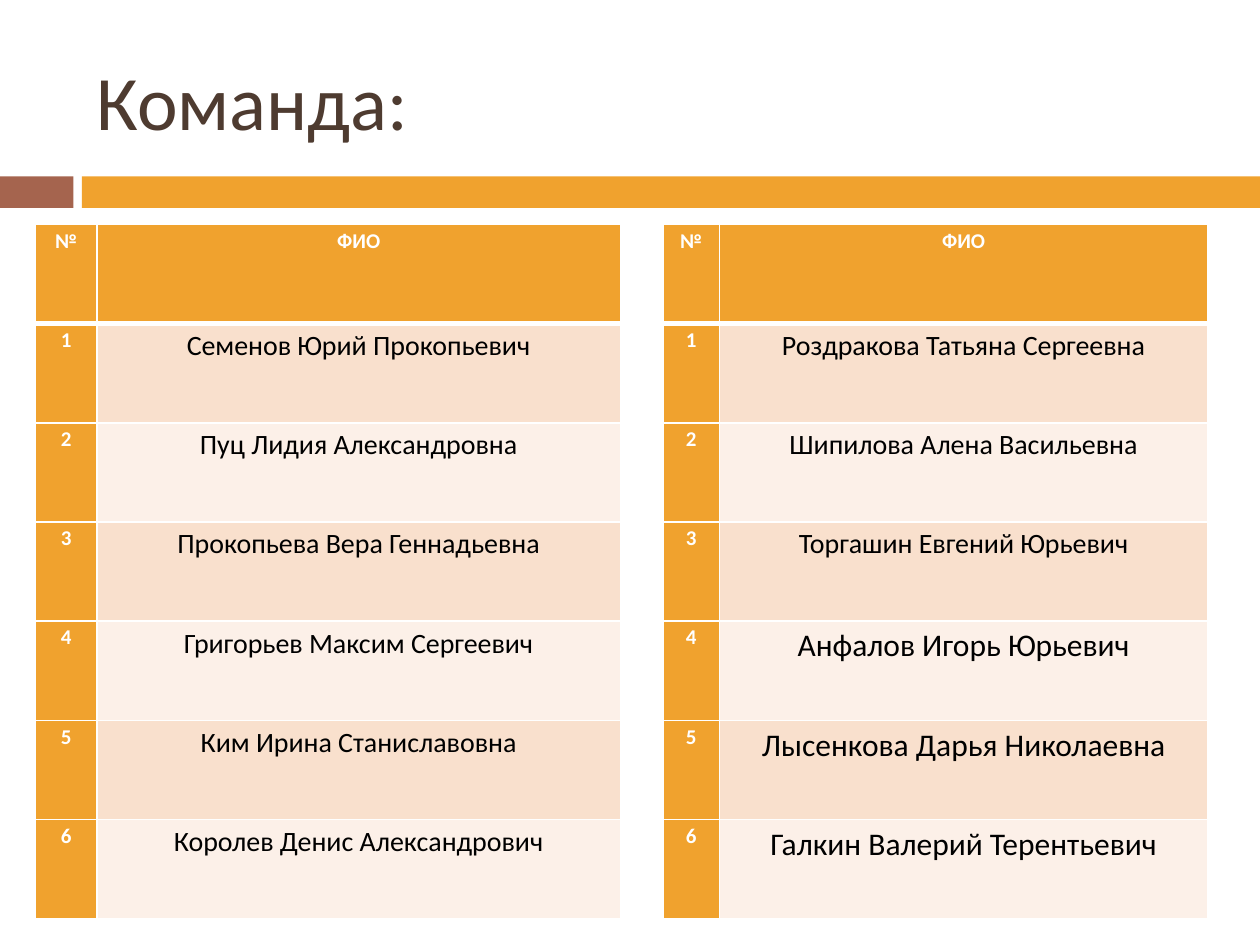
from dataclasses import dataclass

from lxml.etree import SubElement
from pptx import Presentation
from pptx.dml.color import RGBColor
from pptx.enum.shapes import MSO_SHAPE
from pptx.enum.text import MSO_ANCHOR, PP_ALIGN
from pptx.oxml.ns import qn
from pptx.slide import Slide
from pptx.table import _Cell
from pptx.util import Pt

FONT = "Calibri"
ORANGE = "F0A22E"
BROWN = "A5644E"
TITLE_COLOR = "4E3B30"
WHITE = "FFFFFF"
BLACK = "000000"
BANDS = ("F9E0CD", "FCF0E8")

TABLE_TOP = 128.2
ROW_HEIGHT = 56.7
THIN, THICK = 1, 3


@dataclass
class Member:
    name: str
    size: float = 16


@dataclass
class Roster:
    left: float
    number_width: float
    name_width: float
    members: list[Member]


@dataclass
class Bar:
    left: float
    width: float
    color: str


BARS = [Bar(0, 42, BROWN), Bar(46.8, 673.2, ORANGE)]

ROSTERS = [
    Roster(20.1, 35.4, 299, [
        Member("Семенов Юрий Прокопьевич"),
        Member("Пуц Лидия Александровна"),
        Member("Прокопьева Вера Геннадьевна"),
        Member("Григорьев Максим Сергеевич"),
        Member("Ким Ирина Станиславовна"),
        Member("Королев Денис Александрович"),
    ]),
    Roster(378.8, 32.3, 279.2, [
        Member("Роздракова Татьяна Сергеевна"),
        Member("Шипилова Алена Васильевна"),
        Member("Торгашин Евгений Юрьевич"),
        Member("Анфалов Игорь Юрьевич", 18),
        Member("Лысенкова Дарья Николаевна", 18),
        Member("Галкин Валерий Терентьевич", 18),
    ]),
]


def rgb(color: str) -> RGBColor:
    return RGBColor.from_string(color)


def draw_bar(page: Slide, bar: Bar) -> None:
    shape = page.shapes.add_shape(
        MSO_SHAPE.RECTANGLE, Pt(bar.left), Pt(100.8), Pt(bar.width), Pt(18))
    shape.shadow.inherit = False
    shape.fill.solid()
    shape.fill.fore_color.rgb = rgb(bar.color)
    shape.line.fill.background()


def draw_title(page: Slide, text: str) -> None:
    box = page.shapes.add_textbox(Pt(48), Pt(18), Pt(642), Pt(78))
    frame = box.text_frame
    frame.word_wrap = True
    frame.vertical_anchor = MSO_ANCHOR.MIDDLE
    para = frame.paragraphs[0]
    para.text = text
    para.font.name = FONT
    para.font.size = Pt(44)
    para.font.color.rgb = rgb(TITLE_COLOR)


def set_borders(cell: _Cell, top: float, bottom: float) -> None:
    """Give the cell white borders; the sides are thin. Call before filling."""
    properties = cell._tc.get_or_add_tcPr()
    widths = {"a:lnL": THIN, "a:lnR": THIN, "a:lnT": top, "a:lnB": bottom}
    for tag, width in widths.items():
        line = SubElement(properties, qn(tag), w=str(Pt(width)))
        fill = SubElement(line, qn("a:solidFill"))
        SubElement(fill, qn("a:srgbClr"), val=WHITE)


def fill_cell(cell: _Cell, text: str, size: float, color: str,
              background: str, bold: bool) -> None:
    cell.margin_left = cell.margin_right = Pt(5)
    cell.margin_top = cell.margin_bottom = 0
    cell.fill.solid()
    cell.fill.fore_color.rgb = rgb(background)
    para = cell.text_frame.paragraphs[0]
    para.text = text
    para.alignment = PP_ALIGN.CENTER
    para.line_spacing = 1.15
    para.space_after = Pt(10)
    para.font.name = FONT
    para.font.size = Pt(size)
    para.font.bold = bold
    para.font.color.rgb = rgb(color)


def draw_roster(page: Slide, roster: Roster) -> None:
    row_count = len(roster.members) + 1
    widths = (roster.number_width, roster.name_width)
    table = page.shapes.add_table(
        row_count, 2, Pt(roster.left), Pt(TABLE_TOP),
        Pt(sum(widths)), Pt(ROW_HEIGHT * row_count)).table
    for column, width in zip(table.columns, widths):
        column.width = Pt(width)
    for index, row in enumerate(table.rows):
        row.height = Pt(ROW_HEIGHT)
        for cell in row.cells:
            set_borders(cell, THICK if index == 1 else THIN,
                        THICK if index == 0 else THIN)

    for column, heading in enumerate(("№", "ФИО")):
        fill_cell(table.cell(0, column), heading, 12, WHITE, ORANGE, True)
    for number, member in enumerate(roster.members, start=1):
        band = BANDS[(number - 1) % len(BANDS)]
        fill_cell(table.cell(number, 0), str(number), 12, WHITE, ORANGE, True)
        fill_cell(table.cell(number, 1), member.name, member.size, BLACK, band, False)


def main() -> None:
    deck = Presentation()
    deck.slide_width, deck.slide_height = Pt(720), Pt(540)
    page = deck.slides.add_slide(deck.slide_layouts[6])
    for bar in BARS:
        draw_bar(page, bar)
    draw_title(page, "Команда:")
    for roster in ROSTERS:
        draw_roster(page, roster)
    deck.save("out.pptx")


if __name__ == "__main__":
    main()
